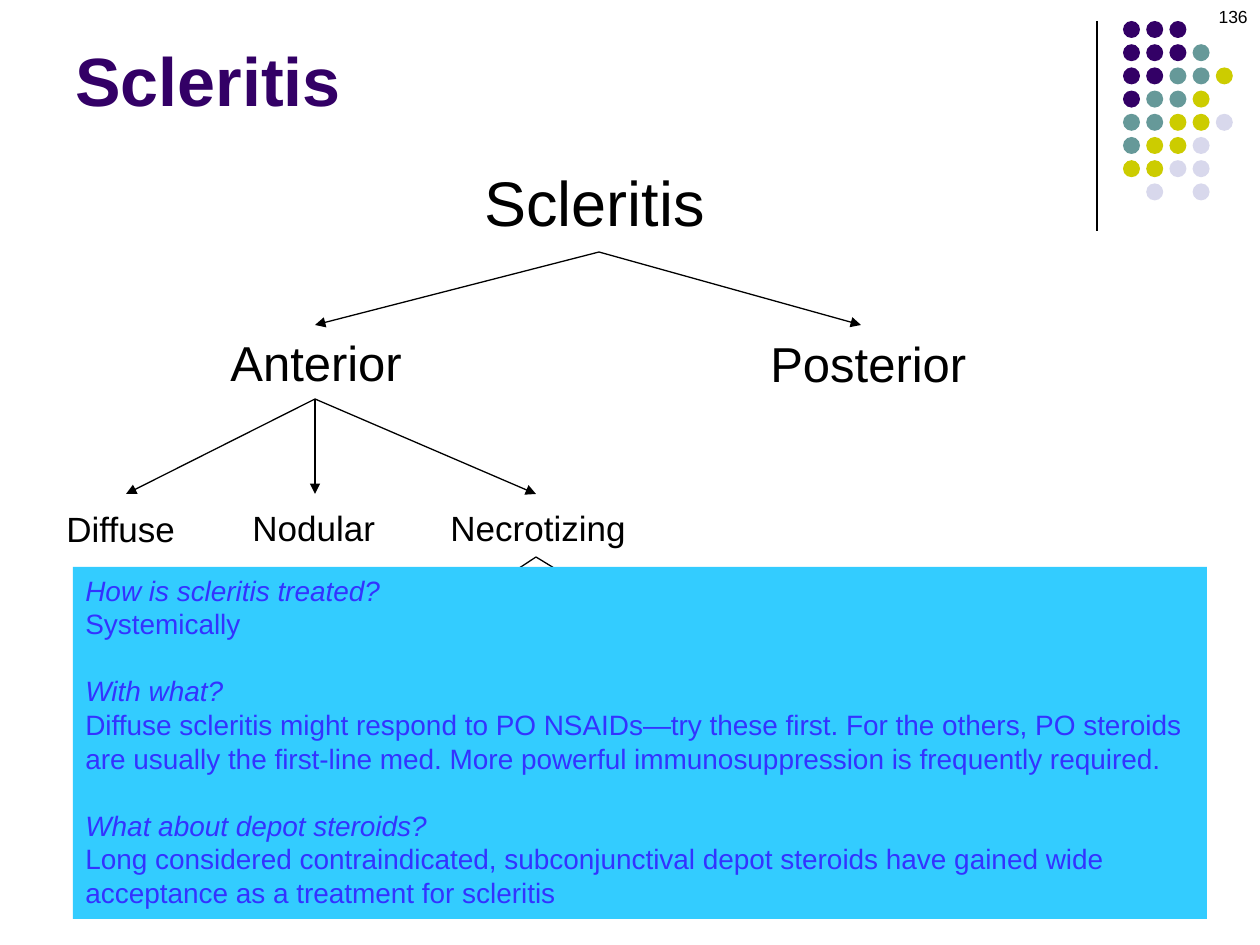
from pptx import Presentation, util as u
from pptx.dml.color import RGBColor
from pptx.enum import shapes, text
from pptx.oxml.ns import qn
from lxml import etree

PX = 914400 / 126
BLACK = RGBColor(0x00, 0x00, 0x00)
PURPLE = RGBColor(0x33, 0x00, 0x66)
TEAL = RGBColor(0x66, 0x99, 0x99)
OLIVE = RGBColor(0xCC, 0xCC, 0x00)
PALE = RGBColor(0xD8, 0xD8, 0xEC)
SKY = RGBColor(0x33, 0xCC, 0xFF)
BLUE = RGBColor(0x33, 0x33, 0xFF)

DOTS = ["PPP", "PPPT", "PPTTO", "PTTO", "TTOOL", "TOOL", "OOLL", " L L"]
TINTS = {"P": PURPLE, "T": TEAL, "O": OLIVE, "L": PALE}

# name, left, top, width, height, size
NODES = [
    ("Scleritis", 472, 157, 246, 88, 36),
    ("Anterior", 218, 326, 198, 72, 28),
    ("Posterior", 758, 327, 222, 72, 28),
    ("Diffuse", 54, 501, 135, 54, 20),
    ("Nodular", 240, 500, 149, 54, 20),
    ("Necrotizing", 438, 500, 204, 54, 20),
]
# start of a fork, then the ends of its arrows
FORKS = [
    ((599, 252), [(315, 325), (861, 325)]),
    ((315, 399), [(315, 494), (126, 494), (536, 494)]),
    ((536, 557), [(410, 640), (672, 640)]),
]
FACTS = [
    ("How is scleritis treated?", "Systemically"),
    ("With what?",
     "Diffuse scleritis might respond to PO NSAIDs—try these first. For the "
     "others, PO steroids are usually the first-line med. More powerful "
     "immunosuppression is frequently required."),
    ("What about depot steroids?",
     "Long considered contraindicated, subconjunctival depot steroids have "
     "gained wide acceptance as a treatment for scleritis"),
]


def px(*nums):
    return [u.Emu(round(n * PX)) for n in nums]


def write(para, words, size, color=BLACK, bold=False, italic=False,
          align=text.PP_ALIGN.LEFT, before=0):
    para.alignment = align
    para.space_before = u.Pt(before)
    run = para.add_run()
    run.text = words
    font = run.font
    font.name, font.size = "Arial", u.Pt(size)
    font.bold, font.italic = bold, italic
    font.color.rgb = color


def label(slide, box, words, size, wrap=True, anchor=text.MSO_ANCHOR.TOP, **form):
    frame = slide.shapes.add_textbox(*px(*box)).text_frame
    frame.word_wrap = wrap
    if not wrap:
        frame.auto_size = text.MSO_AUTO_SIZE.SHAPE_TO_FIT_TEXT
    frame.vertical_anchor = anchor
    write(frame.paragraphs[0], words, size, **form)


def solid(slide, kind, box, color):
    shape = slide.shapes.add_shape(kind, *px(*box))
    shape.shadow.inherit = False
    shape.fill.solid()
    shape.fill.fore_color.rgb = color
    shape.line.fill.background()
    return shape


def line(slide, start, end, arrow=False):
    wire = slide.shapes.add_connector(
        shapes.MSO_CONNECTOR.STRAIGHT, *px(*start, *end))
    wire.line.color.rgb = BLACK
    wire.line.width = u.Pt(0.75)
    if arrow:
        etree.SubElement(wire.line._get_or_add_ln(), qn("a:tailEnd"),
                         type="triangle")
    etree.SubElement(wire._element.spPr, qn("a:effectLst"))


def corner(slide, left, top):
    """Rule and dot grid at the top right."""
    line(slide, (left, top), (left, top + 210))
    for row, marks in enumerate(DOTS):
        for col, mark in enumerate(marks):
            if mark in TINTS:
                box = (left + 26 + col * 23.2, top + row * 23.2, 17, 17)
                solid(slide, shapes.MSO_SHAPE.OVAL, box, TINTS[mark])


def tree(slide, left, top):
    for name, x, y, wide, high, size in NODES:
        label(slide, (left + x, top + y, wide, high), name, size, wrap=False)
    for (x, y), ends in FORKS:
        for to_x, to_y in ends:
            line(slide, (left + x, top + y), (left + to_x, top + to_y),
                 arrow=True)


def panel(slide, box):
    """Questions in italics, each with its answer below."""
    frame = solid(slide, shapes.MSO_SHAPE.RECTANGLE, box, SKY).text_frame
    frame.word_wrap = True
    frame.vertical_anchor = text.MSO_ANCHOR.TOP
    para = frame.paragraphs[0]
    for num, (ask, reply) in enumerate(FACTS):
        if num:
            para = frame.add_paragraph()
        write(para, ask, 16, color=BLUE, italic=True, before=19.2 if num else 0)
        write(frame.add_paragraph(), reply, 16, color=BLUE)


def main():
    deck = Presentation()
    deck.slide_width, deck.slide_height = px(1260, 945)
    slide = deck.slides.add_slide(deck.slide_layouts[6])
    corner(slide, 1097, 21)
    label(slide, (63, 10, 1040, 116), "Scleritis", 39, color=PURPLE, bold=True,
          anchor=text.MSO_ANCHOR.BOTTOM)
    tree(slide, 0, 0)
    panel(slide, (73, 567, 1134, 352))
    label(slide, (966, 0, 294, 63), "136", 10, align=text.PP_ALIGN.RIGHT)
    deck.save("out.pptx")


if __name__ == "__main__":
    main()
